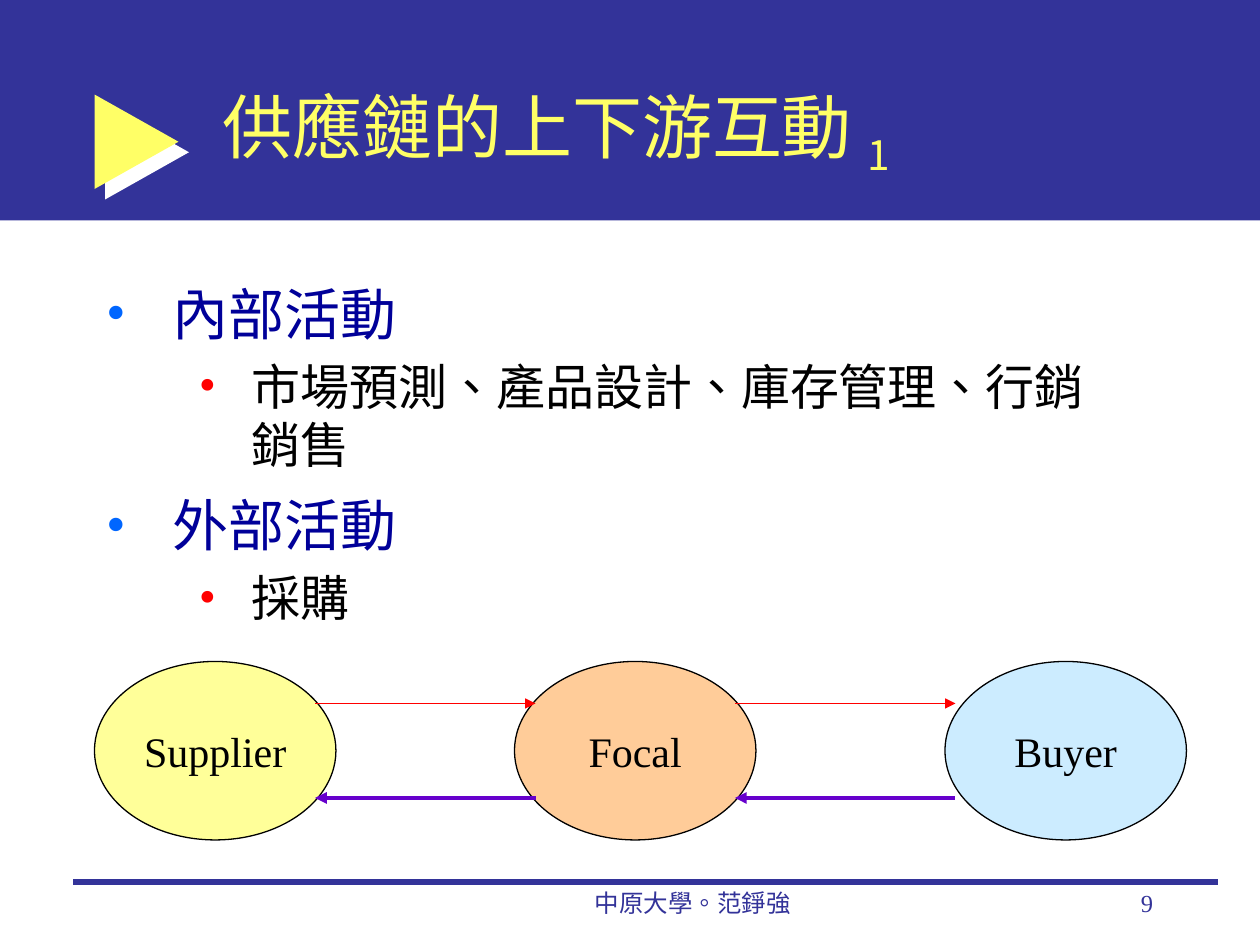
from dataclasses import dataclass
from itertools import product

from lxml.etree import SubElement
from pptx import Presentation
from pptx.dml.color import RGBColor
from pptx.enum.shapes import MSO_CONNECTOR, MSO_SHAPE as Preset
from pptx.enum.text import MSO_ANCHOR as Anchor, PP_ALIGN as Align
from pptx.oxml.ns import qn
from pptx.util import Inches, Pt


@dataclass(frozen=True)
class Theme:
    serif: str = "Times New Roman"
    sans: str = "Noto Sans CJK SC"
    navy: str = "333399"
    yellow: str = "FFFF66"
    white: str = "FFFFFF"
    black: str = "000000"
    heading: str = "000099"
    heading_bullet: str = "0066FF"
    detail_bullet: str = "FF0000"
    forward: str = "FF0000"
    backward: str = "6600CC"
    title_size: int = 40
    heading_size: int = 32
    detail_size: int = 28
    node_size: int = 24
    footer_size: int = 14


THEME = Theme()
UNITS_PER_INCH = 12
COLUMNS, ROWS = 120, 90

NODES = [("Supplier", 9, "FFFF99"), ("Focal", 49, "FFCC99"), ("Buyer", 90, "CCECFF")]
NODE_TOP, NODE_WIDTH, NODE_HEIGHT = 63, 23, 17
FLOW_OFFSET, FLOW_LENGTH = 21, 21

OUTLINE = [
    (0, "內部活動"),
    (1, "市場預測、產品設計、庫存管理、行銷銷售"),
    (0, "外部活動"),
    (1, "採購"),
]


def grid(*units):
    """Turn grid units into lengths."""
    return [Inches(unit / UNITS_PER_INCH) for unit in units]


def color(code):
    return RGBColor.from_string(code)


def format_run(run, font_name, size, code):
    run.font.name = font_name
    run.font.size = Pt(size)
    run.font.color.rgb = color(code)
    properties = run.font._element
    properties.set("lang", "zh-TW")
    east_asian = SubElement(properties, qn("a:ea"))
    east_asian.set("typeface", THEME.sans)


def add_preset(slide, preset, box, fill, outline=None):
    shape = slide.shapes.add_shape(preset, *grid(*box))
    shape.shadow.inherit = False
    shape.fill.solid()
    shape.fill.fore_color.rgb = color(fill)
    if outline:
        shape.line.color.rgb = color(outline)
        shape.line.width = Pt(0.75)
    else:
        shape.line.fill.background()
    return shape


def add_line(slide, start, end, code, width, arrow=None):
    """Draw a line; arrow is headEnd (at start) or tailEnd (at end)."""
    line = slide.shapes.add_connector(MSO_CONNECTOR.STRAIGHT, *grid(*start, *end))
    line.line.color.rgb = color(code)
    line.line.width = Pt(width)
    if arrow:
        SubElement(line.line._get_or_add_ln(), qn(f"a:{arrow}")).set("type", "triangle")
    SubElement(line._element.spPr, qn("a:effectLst"))


def add_drop_shadow(shape, code, distance):
    effects = shape._element.spPr.find(qn("a:effectLst"))
    shadow = SubElement(effects, qn("a:outerShdw"), dist=str(Pt(distance)),
                        dir=str(45 * 60000), algn="ctr", rotWithShape="0")
    SubElement(shadow, qn("a:srgbClr"), val=code)


def add_footer(slide, box, text, alignment):
    frame = slide.shapes.add_textbox(*grid(*box)).text_frame
    frame.word_wrap = True
    frame.text = text
    paragraph = frame.paragraphs[0]
    paragraph.alignment = alignment
    format_run(paragraph.runs[0], THEME.serif, THEME.footer_size, THEME.navy)


def add_frame(slide):
    add_preset(slide, Preset.RECTANGLE, (0, 0, COLUMNS, 21), THEME.navy)
    marker = add_preset(slide, Preset.RIGHT_ARROW, (9, 9, 8, 9), THEME.yellow)
    marker.adjustments[0], marker.adjustments[1] = 0.384, 1
    add_drop_shadow(marker, THEME.white, 8.5)
    add_line(slide, (7, 84), (116, 84), THEME.navy, 3)
    add_footer(slide, (47, 84, 38, 6), "中原大學。范錚強", Align.CENTER)
    add_footer(slide, (86, 84, 25, 6), "9", Align.RIGHT)


def set_title(slide, text, index):
    title = slide.shapes.title
    title.left, title.top, title.width, title.height = grid(20, 5, 91, 15)
    frame = title.text_frame
    frame.text = text + " "
    frame.vertical_anchor = Anchor.MIDDLE
    paragraph = frame.paragraphs[0]
    paragraph.alignment = Align.LEFT
    paragraph.add_run().text = index
    for run in paragraph.runs:
        format_run(run, THEME.sans, THEME.title_size, THEME.yellow)
    paragraph.runs[1].font._element.set("baseline", "-25000")
    # Bring the title in front of the banner.
    title._element.getparent().append(title._element)


def set_bullet(paragraph, margin, indent, code):
    properties = paragraph._p.get_or_add_pPr()
    properties.set("marL", str(Inches(margin)))
    properties.set("indent", str(Inches(indent)))
    bullet_color = SubElement(properties, qn("a:buClr"))
    SubElement(bullet_color, qn("a:srgbClr"), val=code)
    SubElement(properties, qn("a:buFont"), typeface=THEME.serif)
    SubElement(properties, qn("a:buChar"), char="•")


def add_outline(slide):
    levels = [
        (0.52, -0.52, THEME.heading_bullet, THEME.serif, THEME.heading_size, THEME.heading, 0.3),
        (1.15, -0.42, THEME.detail_bullet, THEME.sans, THEME.detail_size, THEME.black, 0.2),
    ]
    frame = slide.shapes.add_textbox(*grid(9, 26, 98.3, 54)).text_frame
    frame.word_wrap = True
    frame.text = "\n".join(text for _, text in OUTLINE)
    for position, (paragraph, (level, _)) in enumerate(zip(frame.paragraphs, OUTLINE)):
        margin, indent, bullet, font_name, size, code, gap = levels[level]
        paragraph.level = level
        set_bullet(paragraph, margin, indent, bullet)
        paragraph.line_spacing = Pt(round(size * 1.2, 1))
        if position:
            paragraph.space_before = Pt(round(size * gap, 1))
        format_run(paragraph.runs[0], font_name, size, code)


def add_node(slide, label, left, fill):
    box = (left, NODE_TOP, NODE_WIDTH, NODE_HEIGHT)
    node = add_preset(slide, Preset.OVAL, box, fill, THEME.black)
    frame = node.text_frame
    frame.word_wrap = False
    frame.vertical_anchor = Anchor.MIDDLE
    frame.text = label
    paragraph = frame.paragraphs[0]
    paragraph.alignment = Align.CENTER
    format_run(paragraph.runs[0], THEME.serif, THEME.node_size, THEME.black)


def add_flows(slide):
    flows = [(67, THEME.forward, 0.75, "tailEnd"), (76, THEME.backward, 2.25, "headEnd")]
    for (_, left, _), (row, code, width, arrow) in product(NODES[:-1], flows):
        start = left + FLOW_OFFSET
        add_line(slide, (start, row), (start + FLOW_LENGTH, row), code, width, arrow)


def main():
    presentation = Presentation()
    presentation.slide_width, presentation.slide_height = grid(COLUMNS, ROWS)
    slide = presentation.slides.add_slide(presentation.slide_layouts[5])
    add_frame(slide)
    set_title(slide, "供應鏈的上下游互動", "1")
    for node in NODES:
        add_node(slide, *node)
    add_outline(slide)
    add_flows(slide)
    presentation.save("out.pptx")


if __name__ == "__main__":
    main()
